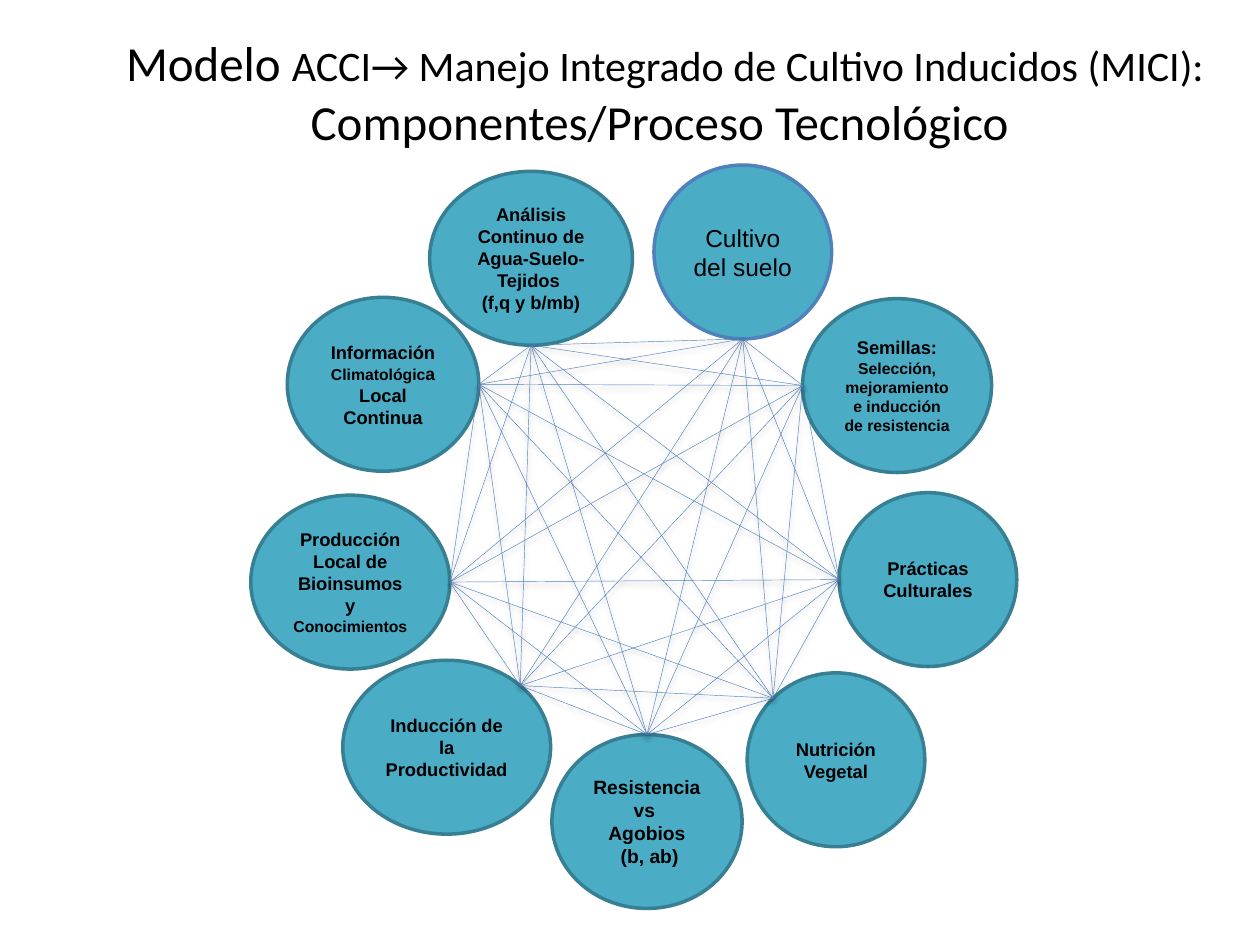
from dataclasses import dataclass
from itertools import combinations

import pptx
import pptx.dml.color
import pptx.enum.shapes
import pptx.enum.text
import pptx.oxml
import pptx.util

Inches = pptx.util.Inches
Pt = pptx.util.Pt
ALIGN = pptx.enum.text.PP_ALIGN.CENTER
COLORS = {"fill": "4BACC6", "edge": "377F92", "blue": "4F81BD", "text": "000000"}
SHADOW = (
    '<a:effectLst xmlns:a="http://schemas.openxmlformats.org/drawingml/2006/main">'
    '<a:outerShdw blurRad="40000" dist="20000" dir="5400000" rotWithShape="0">'
    '<a:srgbClr val="000000"><a:alpha val="38000"/></a:srgbClr>'
    "</a:outerShdw></a:effectLst>"
)

# Where the links meet a circle, as shares of its width and height
TOP, LOW, LEFT, RIGHT = (0.5, 0), (0.5, 1), (0, 0.5), (1, 0.5)
TOP_LEFT, TOP_RIGHT = (0.146, 0.146), (0.854, 0.146)


@dataclass
class Node:
    left: float
    top: float
    width: float
    site: tuple
    paras: list  # each paragraph is a list of (text, size) runs
    bold: bool = True
    edge: str = "edge"
    height: float = 1.38

    def joint(self) -> tuple:
        """Return the point on the rim where the links meet."""
        return (Inches(self.left + self.width * self.site[0]),
                Inches(self.top + self.height * self.site[1]))


NODES = [
    Node(3.41, 1.36, 1.61, LOW,
         [[("Análisis Continuo de Agua-Suelo-Tejidos ", 10.5)], [("(f,q y b/mb)", 10.5)]]),
    Node(5.19, 1.31, 1.41, LOW, [[("Cultivo del suelo", 14)]], False, "blue"),
    Node(6.37, 2.37, 1.5, LEFT,
         [[("Semillas: ", 10.5),
           ("Selección, mejoramiento e inducción de resistencia", 9)]]),
    Node(6.66, 3.91, 1.41, LEFT, [[("Prácticas Culturales", 10.5)]]),
    Node(5.93, 5.34, 1.41, TOP_LEFT, [[("Nutrición Vegetal", 10.5)]]),
    Node(4.38, 5.83, 1.51, TOP,
         [[("Resistencia ", 11)], [("vs ", 11)], [("Agobios", 11)], [(" (b, ab)", 11)]]),
    Node(2.72, 5.24, 1.65, TOP_RIGHT, [[("Inducción de la Productividad", 10.5)]]),
    Node(1.99, 3.93, 1.58, RIGHT,
         [[("Producción Local de Bioinsumos y ", 10.5), ("Conocimientos ", 9)]]),
    Node(2.28, 2.36, 1.52, RIGHT,
         [[("Información ", 10.5), ("Climatológic", 9), ("a", 10)],
          [("Local Continua", 10.5)]]),
]
TITLE = [
    [(" Modelo ", 28), ("ACCI→ Manejo Integrado de Cultivo Inducidos (MICI):", 24)],
    [("Componentes/Proceso Tecnológico", 28)],
]


def paint(color, key: str) -> None:
    color.rgb = pptx.dml.color.RGBColor.from_string(COLORS[key])


def write(frame, paras: list, face: str, bold: bool = False) -> None:
    frame.word_wrap = True
    for index, runs in enumerate(paras):
        para = frame.add_paragraph() if index else frame.paragraphs[0]
        para.alignment = ALIGN
        for text, size in runs:
            run = para.add_run()
            run.text = text
            style = {"name": face, "size": Pt(size), "bold": bold}
            for key, value in style.items():
                setattr(run.font, key, value)
            paint(run.font.color, "text")


def draw_node(slide, node: Node) -> None:
    shape = slide.shapes.add_shape(
        pptx.enum.shapes.MSO_SHAPE.FLOWCHART_CONNECTOR,
        Inches(node.left), Inches(node.top), Inches(node.width), Inches(node.height))
    shape.shadow.inherit = False
    shape.fill.solid()
    paint(shape.fill.fore_color, node.fill if hasattr(node, "fill") else "fill")
    paint(shape.line.color, node.edge)
    shape.line.width = Pt(2)
    shape.text_frame.vertical_anchor = pptx.enum.text.MSO_ANCHOR.MIDDLE
    write(shape.text_frame, node.paras, "Arial", node.bold)


def draw_link(slide, start: Node, end: Node) -> None:
    link = slide.shapes.add_connector(
        pptx.enum.shapes.MSO_CONNECTOR.STRAIGHT, *start.joint(), *end.joint())
    paint(link.line.color, "blue")
    link.line.width = Pt(0.25)
    link._element.spPr.append(pptx.oxml.parse_xml(SHADOW))


def main() -> None:
    deck = pptx.Presentation()
    deck.slide_width, deck.slide_height = Inches(10), Inches(7.5)
    slide = deck.slides.add_slide(deck.slide_layouts[6])
    title = slide.shapes.add_textbox(Inches(0.73), Inches(0.21), Inches(9.01), Inches(1.04))
    write(title.text_frame, TITLE, "Calibri")
    for node in NODES:
        draw_node(slide, node)
    for start, end in combinations(NODES, 2):
        draw_link(slide, start, end)
    deck.save("out.pptx")


if __name__ == "__main__":
    main()
